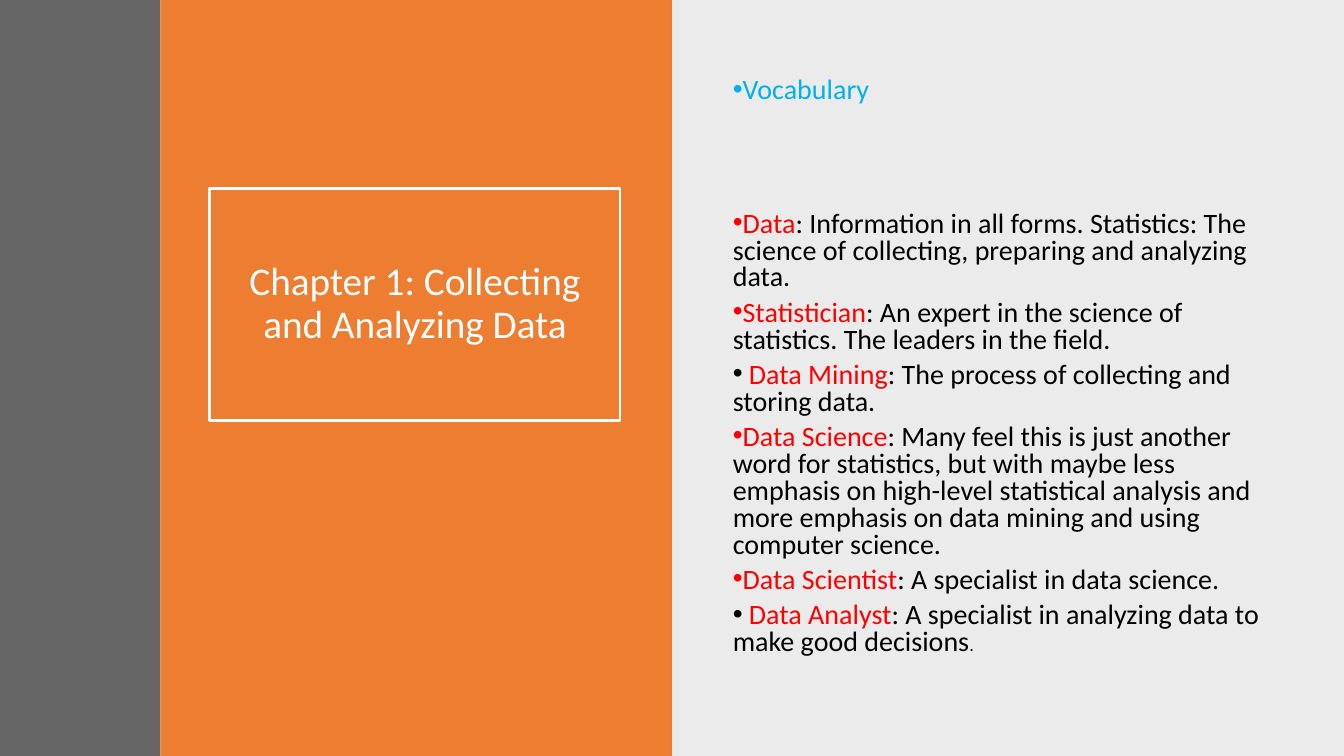
from lxml.etree import SubElement as Sub
from pptx import Presentation
from pptx.dml.color import RGBColor
from pptx.enum.shapes import MSO_SHAPE as Shape
from pptx.enum.text import MSO_ANCHOR as Anchor, MSO_AUTO_SIZE as Fit, PP_ALIGN as Align
from pptx.oxml.ns import qn
from pptx.util import Inches, Pt

# Content
TITLE = "Chapter 1: Collecting and Analyzing Data"
HEAD = [[("Vocabulary", "blue", 20)]]
TERMS = [
    ("", "Data", ": Information in all forms. Statistics: The science of "
     "collecting, preparing and analyzing data."),
    ("", "Statistician", ": An expert in the science of statistics. "
     "The leaders in the field."),
    (" ", "Data Mining", ": The process of collecting and storing data."),
    ("", "Data Science", ": Many feel this is just another word for statistics, "
     "but with maybe less emphasis on high-level statistical analysis and more "
     "emphasis on data mining and using computer science."),
    ("", "Data Scientist", ": A specialist in data science."),
    (" ", "Data Analyst", ": A specialist in analyzing data to make good decisions"),
]
FONT = "Calibri"
HUES = {"black": "000000", "white": "FFFFFF", "orange": "ED7D31",
        "gray": "404040", "blue": "00B0F0", "red": "FF0000"}

# Layout: full-height panels split the width at these edges
WIDE, HIGH = 13.33, 7.5
EDGES = [0, 1.59, WIDE / 2, WIDE]
PANELS = [("gray", 80), ("orange", 100), ("black", 8)]
TITLE_BOX = (2.08, 1.87, 4.07, 2.3)
HEAD_BOX = (7.17, 0.7, 5.53, 1.2)
TERM_BOX = (7.17, 2.05, 5.54, 4.75)


def hue(name):
    return RGBColor.from_string(HUES[name])


def style(run, color, size):
    run.font.name, run.font.size = FONT, Pt(size)
    run.font.color.rgb = hue(color)


def panel(left, right, color, alpha):
    box = slide.shapes.add_shape(Shape.RECTANGLE, Inches(left), 0,
                                 Inches(right - left), Inches(HIGH))
    box.shadow.inherit = False
    box.line.fill.background()
    box.fill.solid()
    box.fill.fore_color.rgb = hue(color)
    if alpha < 100:
        tone = next(box.element.spPr.iter(qn("a:srgbClr")))
        Sub(tone, qn("a:alpha"), val=str(alpha * 1000))
    title.element.addprevious(box.element)


def bullets(box, paras, lead, before, after):
    frame = slide.shapes.add_textbox(*map(Inches, box)).text_frame
    frame.word_wrap = True
    for i, parts in enumerate(paras):
        para = frame.add_paragraph() if i else frame.paragraphs[0]
        para.line_spacing = lead
        para.space_before, para.space_after = Pt(before), Pt(after)
        props = para._p.get_or_add_pPr()
        props.set("marL", "0")
        props.set("indent", str(-Inches(0.25)))
        Sub(props, qn("a:buFont"), typeface="Arial")
        Sub(props, qn("a:buChar"), char="•")
        for text, color, size in parts:
            run = para.add_run()
            run.text = text
            style(run, color, size)


deck = Presentation()
deck.slide_width, deck.slide_height = Inches(WIDE), Inches(HIGH)
slide = deck.slides.add_slide(deck.slide_layouts[5])
title = slide.shapes.title

# Panels
for left, right, look in zip(EDGES, EDGES[1:], PANELS):
    panel(left, right, *look)

# Framed title
title.left, title.top, title.width, title.height = map(Inches, TITLE_BOX)
title.line.color.rgb, title.line.width = hue("white"), Pt(2)
frame = title.text_frame
frame.text = TITLE
frame.word_wrap, frame.auto_size = True, Fit.NONE
frame.vertical_anchor = Anchor.MIDDLE
frame.margin_left = frame.margin_right = Inches(0.2)
para = frame.paragraphs[0]
para.alignment, para.line_spacing = Align.CENTER, 0.9
style(para.runs[0], "white", 28)

# Vocabulary
terms = [[(text, color, 20) for text, color in zip(row, ("black", "red", "black")) if text]
         for row in TERMS]
terms[-1].append((".", "black", 13))
bullets(HEAD_BOX, HEAD, 0.9, 10, 0)
bullets(TERM_BOX, terms, 0.8, 0, 6)

deck.save("out.pptx")
